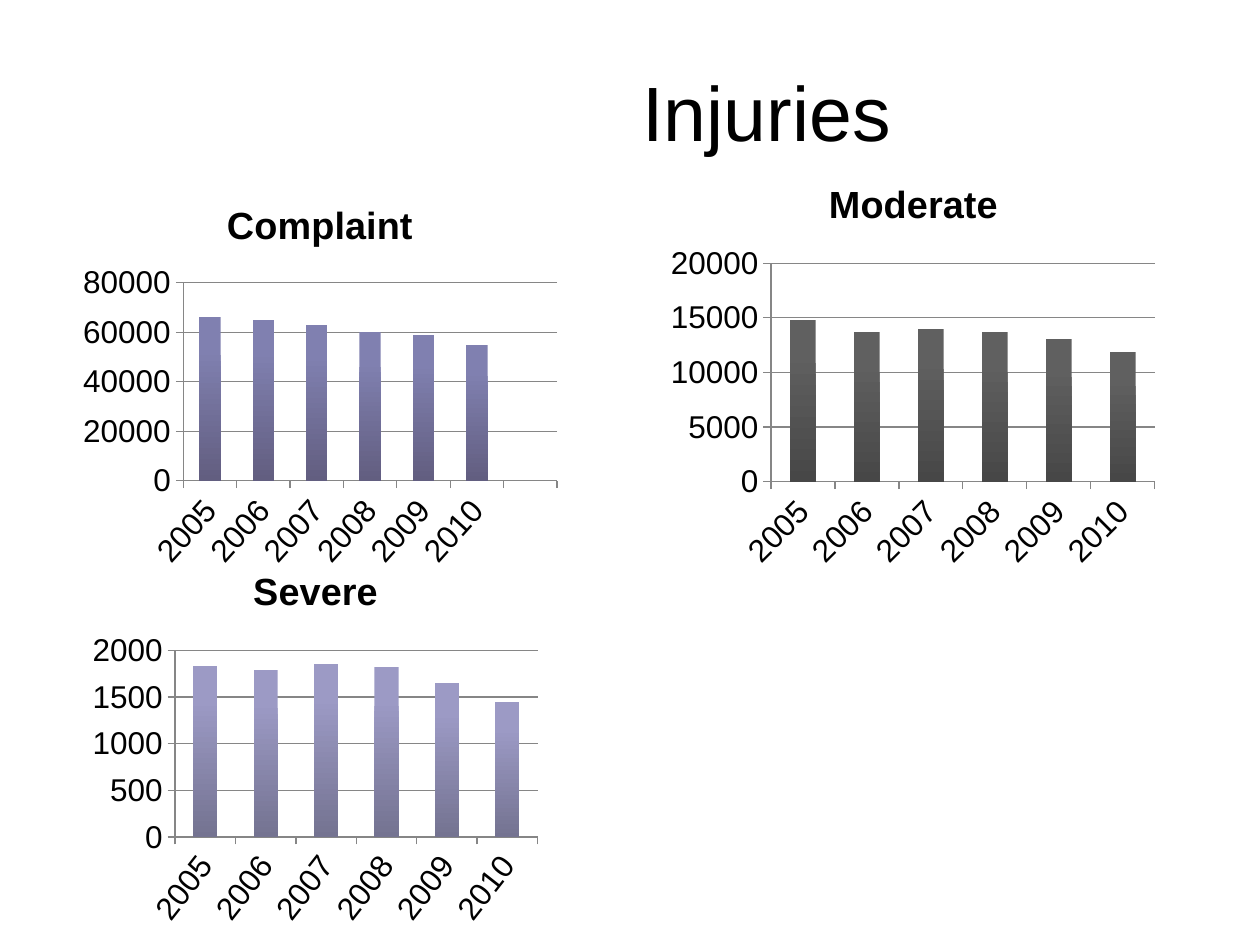
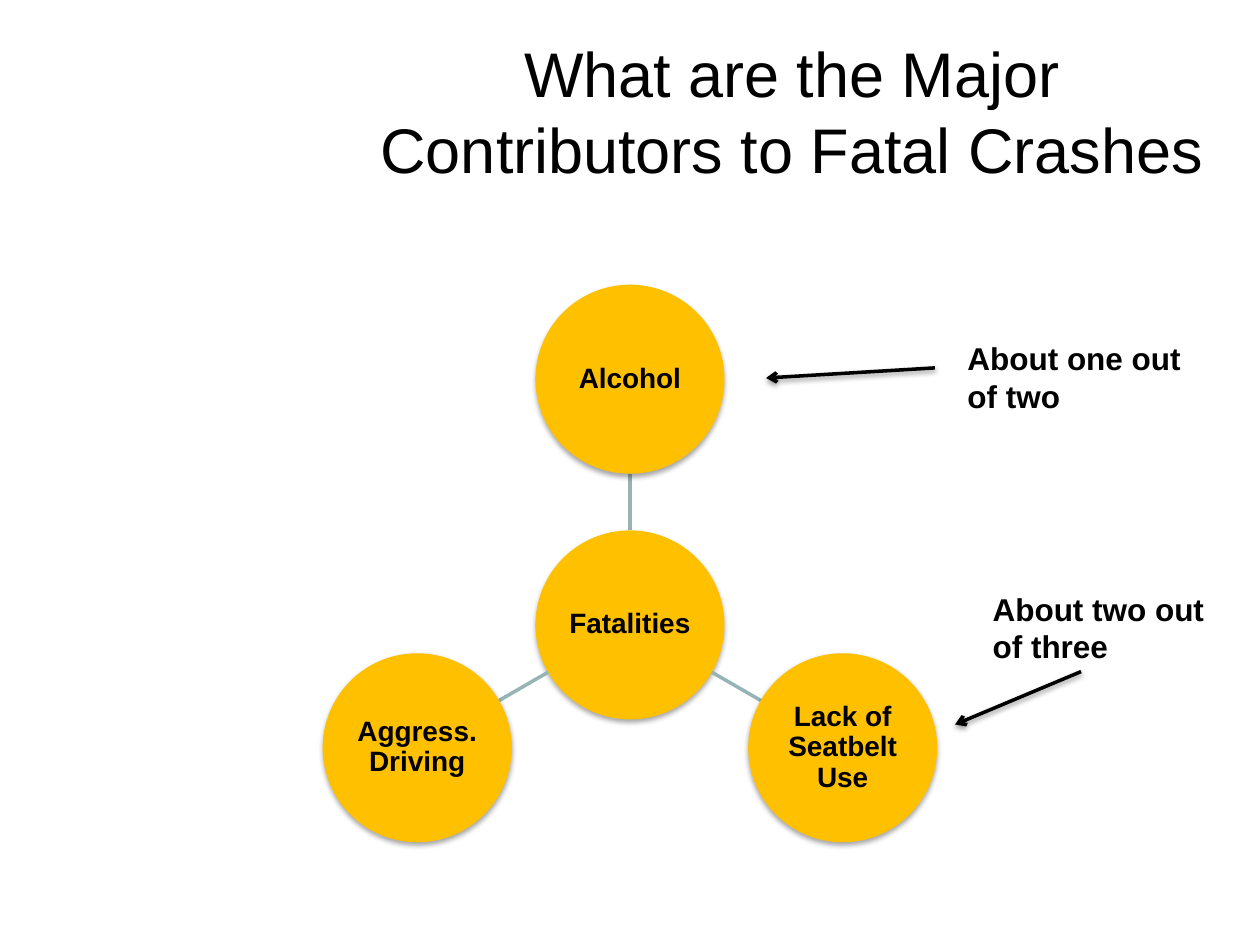
from math import cos, radians, sin

from lxml.etree import SubElement
from pptx import Presentation
from pptx.chart.data import CategoryChartData
from pptx.dml.color import RGBColor
from pptx.enum.chart import XL_CHART_TYPE, XL_TICK_MARK
from pptx.enum.shapes import MSO_CONNECTOR, MSO_SHAPE
from pptx.enum.text import MSO_ANCHOR, PP_ALIGN
from pptx.oxml import parse_xml
from pptx.oxml.ns import nsdecls, qn
from pptx.util import Inches, Pt

YEARS = ["2005", "2006", "2007", "2008", "2009", "2010"]
CHARTS = [
    dict(name="Complaint", box=(0.58, 1.42, 3.92, 3.17), top=80000, step=20000,
         cats=YEARS + [""], vals=[66000, 65000, 63000, 60000, 59000, 55000, None],
         fade=("8080B0", "625E80"), plot=(0.223, 0.26, 0.757, 0.496), turn=-48),
    dict(name="Moderate", box=(5.25, 1.25, 4, 3.33), top=20000, step=5000,
         cats=YEARS, vals=[14800, 13700, 14000, 13700, 13100, 11900],
         fade=("606060", "474747"), plot=(0.217, 0.252, 0.762, 0.521), turn=-45),
    dict(name="Severe", box=(0.67, 4.33, 3.67, 3.08), top=2000, step=500,
         cats=YEARS, vals=[1830, 1790, 1850, 1820, 1650, 1450],
         fade=("9C9AC5", "747391"), plot=(0.196, 0.27, 0.784, 0.481), turn=-52),
]
TITLES = [
    ("Injuries", (2.67, 0.25, 6.83, 1.25), "head"),
    ("What are the Major Contributors to Fatal Crashes", (2.83, 0.25, 6.91, 1.25), "long"),
]
HUB = "Fatalities"
CAUSES = [("Alcohol", -90), ("Lack of Seatbelt Use", 30), ("Aggress. Driving", 150)]
WHEEL = dict(x=5, y=4.96, size=0.75, reach=1.95)
NOTES = [
    (["About one out of two"], (7.58, 2.64, 2.15, 0.71), True, (7.42, 2.92), (6.08, 3)),
    (["About two out", "of three"], (7.78, 4.63, 1.97, 0.71), False, (8.58, 5.33), (7.58, 5.75)),
]
THEME = dict(
    font="Arial", ink="000000", disc="FFC000", spoke="96B3B6", grid="868686",
    size=dict(head=44, long=36, note=18, disc=16, axis=18, chart=21.6),
)


def tint(code):
    return RGBColor.from_string(code)


def put(item, **vals):
    for key, val in vals.items():
        setattr(item, key, val)


def style(font, role, bold=False):
    put(font, name=THEME["font"], size=Pt(THEME["size"][role]), bold=bold)
    font.color.rgb = tint(THEME["ink"])


def write(frame, lines, role, bold=False, **form):
    for i, line in enumerate(lines):
        para = frame.paragraphs[0] if i == 0 else frame.add_paragraph()
        put(para, **form)
        run = para.add_run()
        run.text = line
        style(run.font, role, bold)


def label(slide, lines, box, role, bold=False, wrap=True, anchor=MSO_ANCHOR.TOP, **form):
    frame = slide.shapes.add_textbox(*map(Inches, box)).text_frame
    put(frame, word_wrap=wrap, vertical_anchor=anchor)
    write(frame, lines, role, bold, **form)


def shade(item, alpha=0, dist=0):
    props = item.element.spPr
    for old in props.findall(qn("a:effectLst")):
        props.remove(old)
    fx = SubElement(props, qn("a:effectLst"))
    if alpha:
        drop = SubElement(fx, qn("a:outerShdw"), blurRad=str(Pt(3.1)),
                          dist=str(Pt(dist)), dir="5400000", rotWithShape="0")
        ink = SubElement(drop, qn("a:srgbClr"), val=THEME["ink"])
        SubElement(ink, qn("a:alpha"), val=str(alpha * 1000))


def link(slide, start, end, color):
    line = slide.shapes.add_connector(MSO_CONNECTOR.STRAIGHT, *map(Inches, start + end))
    line.line.color.rgb = tint(color)
    line.line.width = Pt(2)
    return line


def arrow(slide, start, end):
    line = link(slide, start, end, THEME["ink"])
    SubElement(line.line._get_or_add_ln(), qn("a:tailEnd"), type="arrow")
    shade(line, 38, 1.6)


def disc(slide, text, x, y):
    size = WHEEL["size"]
    box = (x - size, y - size, 2 * size, 2 * size)
    item = slide.shapes.add_shape(MSO_SHAPE.OVAL, *map(Inches, box))
    item.fill.solid()
    item.fill.fore_color.rgb = tint(THEME["disc"])
    item.line.fill.background()
    item.shadow.inherit = False
    shade(item, 35, 1.8)
    frame = item.text_frame
    put(frame, word_wrap=True, vertical_anchor=MSO_ANCHOR.MIDDLE)
    put(frame, **{"margin_" + side: Inches(0.01) for side in ("left", "top", "right", "bottom")})
    write(frame, [text], "disc", True, alignment=PP_ALIGN.CENTER, line_spacing=0.9)


def place(area, plot):
    for old in area.findall(qn("c:layout")):
        area.remove(old)
    parts = "".join(f'<c:{tag} val="{val}"/>' for tag, val in zip("xywh", plot))
    area.insert(0, parse_xml(
        f'<c:layout {nsdecls("c")}><c:manualLayout><c:layoutTarget val="inner"/>'
        f'<c:xMode val="edge"/><c:yMode val="edge"/>{parts}</c:manualLayout></c:layout>'))


def bars(slide, spec):
    data = CategoryChartData()
    data.categories = spec["cats"]
    data.add_series(spec["name"], spec["vals"])
    chart = slide.shapes.add_chart(
        XL_CHART_TYPE.COLUMN_CLUSTERED, *map(Inches, spec["box"]), data).chart
    put(chart, has_legend=False, has_title=True)
    style(chart.font, "axis")
    write(chart.chart_title.text_frame, [spec["name"]], "chart", True)
    cat, val = chart.category_axis, chart.value_axis
    put(val, minimum_scale=0, maximum_scale=spec["top"], major_unit=spec["step"],
        has_major_gridlines=True)
    for axis in (cat, val):
        axis.major_tick_mark = XL_TICK_MARK.OUTSIDE
        style(axis.tick_labels.font, "axis")
    for line in (cat.format.line, val.format.line, val.major_gridlines.format.line):
        line.color.rgb = tint(THEME["grid"])
        line.width = Pt(0.75)
    cat._element.txPr.bodyPr.set("rot", str(spec["turn"] * 60000))
    plot = chart.plots[0]
    put(plot, gap_width=150, vary_by_categories=False)
    fill = plot.series[0].format.fill
    fill.gradient()
    fill.gradient_angle = 270
    for stop, code, spot in zip(fill.gradient_stops, spec["fade"], (0.2, 1)):
        stop.color.rgb = tint(code)
        stop.position = spot
    place(chart._chartSpace.chart.plotArea, spec["plot"])


def polar(angle, dist):
    turn = radians(angle)
    return WHEEL["x"] + dist * cos(turn), WHEEL["y"] + dist * sin(turn)


def wheel(slide):
    disc(slide, HUB, *polar(0, 0))
    size, reach = WHEEL["size"], WHEEL["reach"]
    for text, angle in CAUSES:
        spoke = link(slide, polar(angle, size), polar(angle, reach - size), THEME["spoke"])
        shade(spoke)
        disc(slide, text, *polar(angle, reach))


def main():
    deck = Presentation()
    put(deck, slide_width=Inches(10), slide_height=Inches(7.5))
    slides = []
    for text, box, role in TITLES:
        slide = deck.slides.add_slide(deck.slide_layouts[6])
        label(slide, [text], box, role, anchor=MSO_ANCHOR.MIDDLE, alignment=PP_ALIGN.CENTER)
        slides.append(slide)
    harm, cause = slides
    for spec in CHARTS:
        bars(harm, spec)
    wheel(cause)
    for lines, box, wrap, start, end in NOTES:
        arrow(cause, start, end)
        label(cause, lines, box, "note", True, wrap)
    deck.save("out.pptx")


if __name__ == "__main__":
    main()
